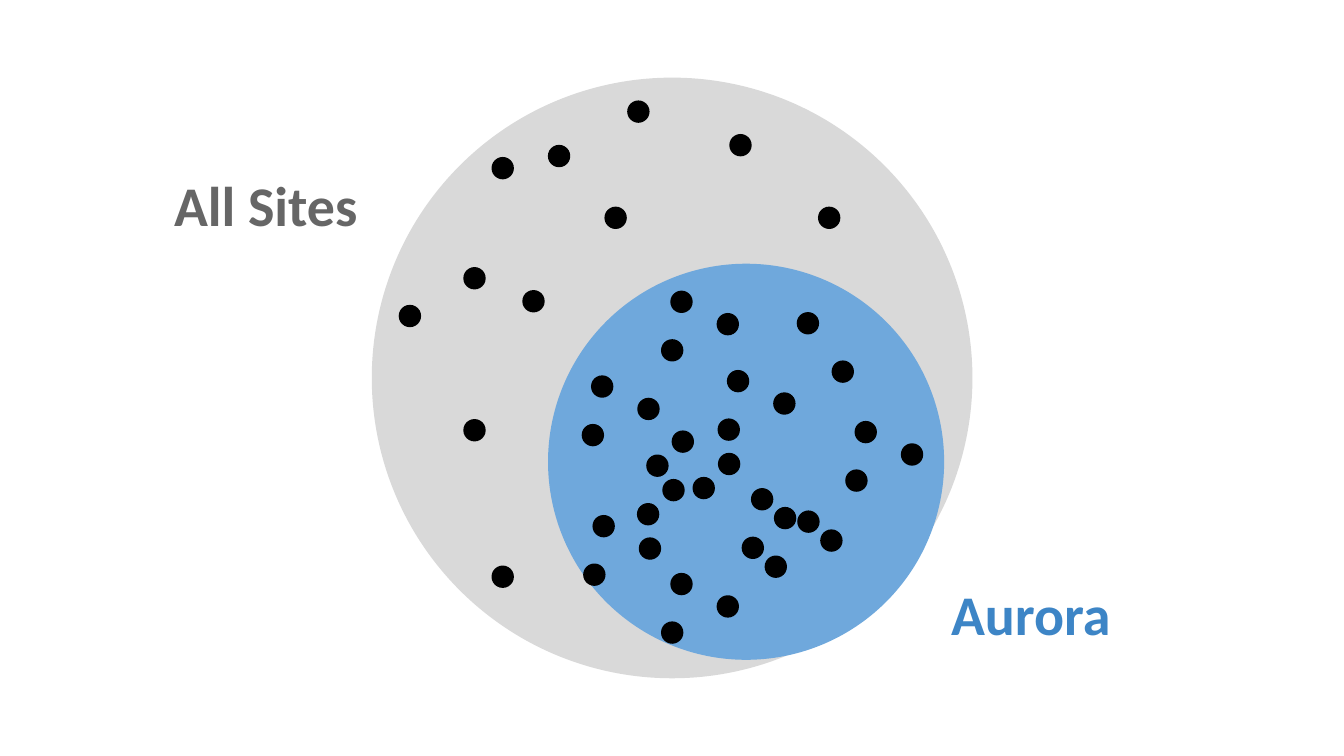
from pptx import Presentation
from pptx.dml.color import RGBColor
from pptx.enum.shapes import MSO_SHAPE
from pptx.util import Pt

ELLIPSE = MSO_SHAPE.OVAL

GREY = RGBColor(0xD9, 0xD9, 0xD9)
DARK_GREY = RGBColor(0x66, 0x66, 0x66)
BLUE = RGBColor(0x6F, 0xA8, 0xDC)
DARK_BLUE = RGBColor(0x3D, 0x85, 0xC6)
BLACK = RGBColor(0, 0, 0)

FONT = "Calibri"
DOT_SIZE = 12
TRIAD = [(0, 0), (24.8, 12), (-5, 26)]

SITE_DOTS = [
    (94.3, 36), (239, 69.1), (80.6, 113.8), (14.4, 121.7),
    (64.1, 261.4), (49, 182.9), (49, 101.5), (64.1, 42.5),
    (136.8, 12.2), (124.6, 69.1), (191.5, 30.2),
]
AURORA_TRIADS = [
    (65.5, 14.4), (23, 59.8), (95.8, 56.9), (52.6, 102.2), (108.7, 120.2),
    (65.5, 165.6), (66.2, 89.3), (23.8, 134.6), (164.2, 84.2), (121, 130.3),
]
AURORA_DOTS = [(151.9, 51.8), (133.2, 25.9)]


def add_circle(shapes, left, top, size, color):
    """Add a filled circle without an outline."""
    circle = shapes.add_shape(ELLIPSE, Pt(left), Pt(top), Pt(size), Pt(size))
    circle.shadow.inherit = False
    circle.fill.solid()
    circle.fill.fore_color.rgb = color
    circle.line.fill.background()


def add_dots(shapes, left, top, offsets):
    """Add black dots at offsets from the given corner."""
    for x, y in offsets:
        add_circle(shapes, left + x, top + y, DOT_SIZE, BLACK)


def add_label(slide, left, top, text, color):
    """Add a bold set name."""
    label = slide.shapes.add_textbox(Pt(left), Pt(top), Pt(127.4), Pt(36))
    frame = label.text_frame
    frame.word_wrap = True
    frame.margin_left = frame.margin_right = Pt(7.2)
    frame.margin_top = frame.margin_bottom = Pt(7.2)
    paragraph = frame.paragraphs[0]
    paragraph.text = text
    paragraph.font.name = FONT
    paragraph.font.size = Pt(30)
    paragraph.font.bold = True
    paragraph.font.color.rgb = color


def add_all_sites(slide, left, top, size):
    """Draw the outer set with its scattered dots."""
    add_circle(slide.shapes, left, top, size, GREY)
    add_dots(slide.shapes, left, top, SITE_DOTS)
    add_label(slide, left - 113, top + 42.4, "All Sites", DARK_GREY)


def add_aurora(slide, left, top, size):
    """Draw the inner set with its dense groups of dots."""
    add_circle(slide.shapes, left, top, size, BLUE)
    for x, y in AURORA_TRIADS:
        group = slide.shapes.add_group_shape()
        add_dots(group.shapes, left + x, top + y, TRIAD)
    add_dots(slide.shapes, left, top, AURORA_DOTS)
    add_label(slide, left + 208.8, top + 162, "Aurora", DARK_BLUE)


def main():
    """Build the presentation with the nested sets."""
    presentation = Presentation()
    presentation.slide_width = Pt(720)
    presentation.slide_height = Pt(405)
    slide = presentation.slides.add_slide(presentation.slide_layouts[6])
    add_all_sites(slide, 199.2, 41.6, 321.8)
    add_aurora(slide, 293.6, 141.3, 212.2)
    presentation.save("out.pptx")


if __name__ == "__main__":
    main()
